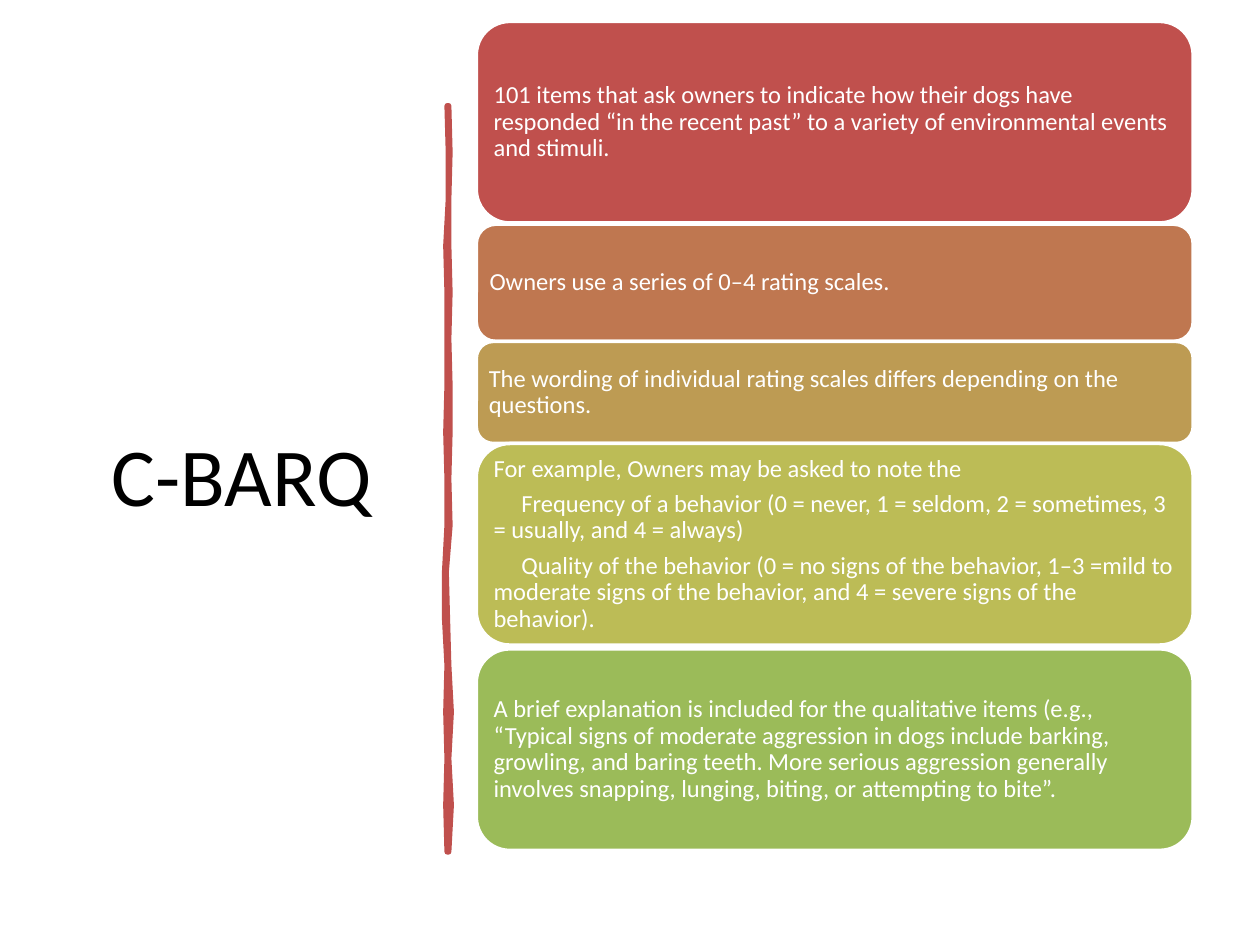
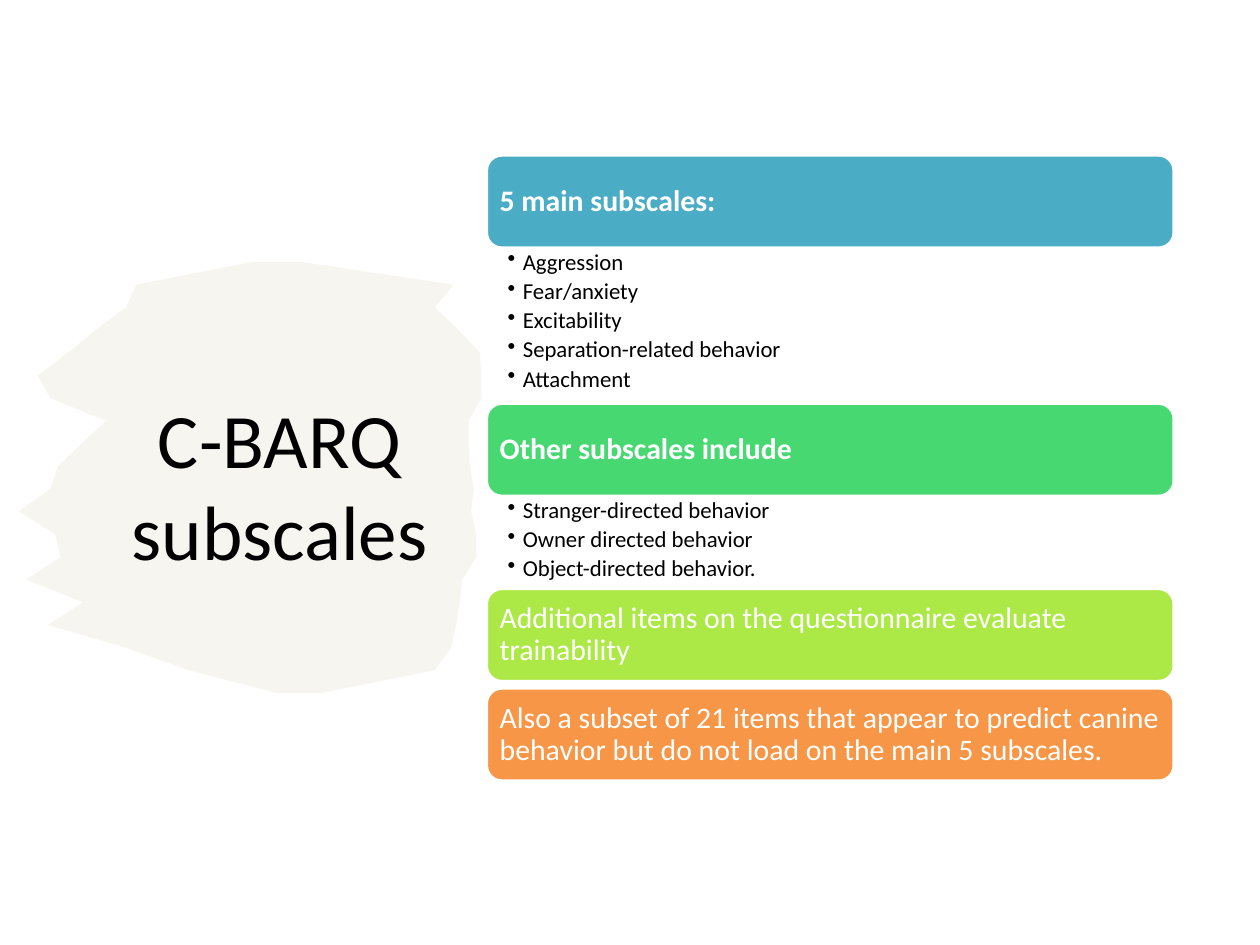
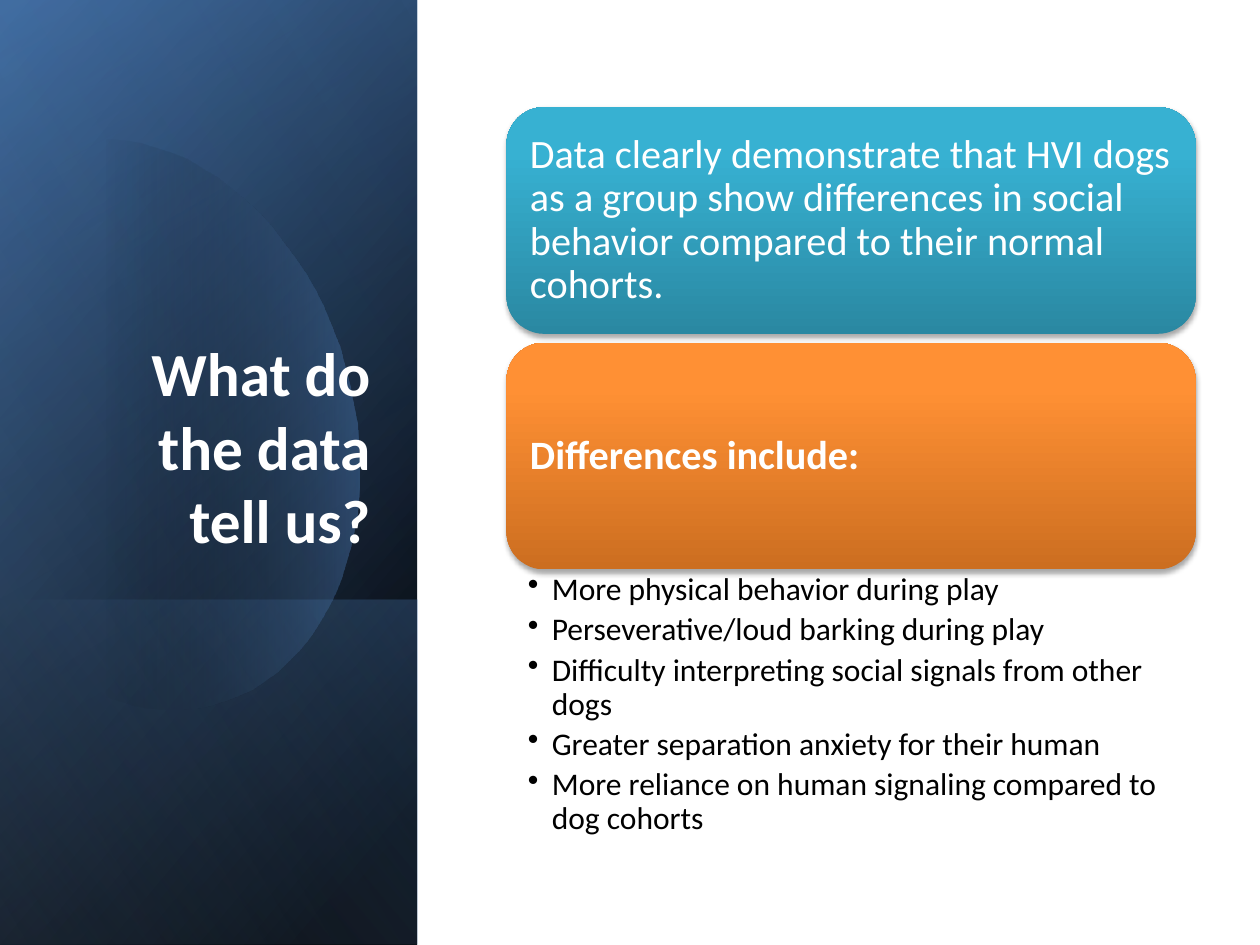
"""Build three slides on the C-BARQ questionnaire and what its data tell us."""
from dataclasses import dataclass
from math import cos, radians, sin

from lxml import etree
from pptx import Presentation
from pptx.dml.color import RGBColor
from pptx.enum.shapes import MSO_SHAPE
from pptx.enum.text import MSO_ANCHOR, PP_ALIGN
from pptx.oxml.ns import qn
from pptx.util import Pt

PX = 9144
ROUNDED, RECTANGLE = MSO_SHAPE.ROUNDED_RECTANGLE, MSO_SHAPE.RECTANGLE
TOP, MIDDLE, BOTTOM = MSO_ANCHOR.TOP, MSO_ANCHOR.MIDDLE, MSO_ANCHOR.BOTTOM
LEFT, CENTER, RIGHT = PP_ALIGN.LEFT, PP_ALIGN.CENTER, PP_ALIGN.RIGHT


@dataclass(frozen=True)
class Theme:
    font: str = "Calibri"
    ink: RGBColor = RGBColor(0x00, 0x00, 0x00)
    paper: RGBColor = RGBColor(0xFF, 0xFF, 0xFF)
    red: RGBColor = RGBColor(0xC0, 0x50, 0x4D)
    copper: RGBColor = RGBColor(0xBF, 0x77, 0x50)
    ochre: RGBColor = RGBColor(0xBD, 0x9B, 0x53)
    olive: RGBColor = RGBColor(0xBC, 0xBC, 0x56)
    green: RGBColor = RGBColor(0x9B, 0xBB, 0x59)
    aqua: RGBColor = RGBColor(0x4B, 0xAC, 0xC6)
    mint: RGBColor = RGBColor(0x47, 0xD8, 0x72)
    lime: RGBColor = RGBColor(0xAC, 0xE9, 0x46)
    orange: RGBColor = RGBColor(0xF7, 0x96, 0x46)
    cream: RGBColor = RGBColor(0xEE, 0xEC, 0xE1)
    blue: RGBColor = RGBColor(0x4F, 0x81, 0xBD)
    navy: RGBColor = RGBColor(0x37, 0x60, 0x92)
    pale_blue: RGBColor = RGBColor(0x95, 0xB3, 0xD7)
    deep_teal: RGBColor = RGBColor(0x2A, 0x88, 0xA2)
    bright_teal: RGBColor = RGBColor(0x37, 0xB1, 0xD2)
    deep_orange: RGBColor = RGBColor(0xCC, 0x6E, 0x20)
    bright_orange: RGBColor = RGBColor(0xFF, 0x90, 0x34)
    items_title: int = 47
    scales_title: int = 44
    data_title: int = 35
    items_card: int = 14
    scales_card: int = 17
    scales_bullet: int = 13
    data_card: int = 23
    data_bullet: int = 18
    card_spacing: float = 0.9
    card_after: float = 0.35
    bullet_after: float = 0.2


theme = Theme()


def write(shape, lines, size, color, insets=(10, 5, 10, 5), anchor=MIDDLE,
          align=LEFT, bold=False, spacing=1.0, after=0, hang=0):
    frame = shape.text_frame
    frame.word_wrap = True
    frame.vertical_anchor = anchor
    (frame.margin_left, frame.margin_top,
     frame.margin_right, frame.margin_bottom) = [inset * PX for inset in insets]
    frame.text = "\n".join(lines)
    for para in frame.paragraphs:
        para.alignment = align
        para.line_spacing = spacing
        para.space_after = Pt(size * after)
        para.font.name = theme.font
        if hang:
            properties = para._p.get_or_add_pPr()
            properties.set("marL", str(hang * PX))
            properties.set("indent", str(-hang * PX))
            bullet = etree.Element(qn("a:buChar"), char="•")
            properties.find(qn("a:spcAft")).addnext(bullet)
        for span in para.runs:
            span.font.name = theme.font
            span.font.size = Pt(size)
            span.font.bold = bold
            span.font.color.rgb = color


def add_card(page, box, fill, lines, size, inset, bold=False):
    card = page.shapes.add_shape(ROUNDED, *[length * PX for length in box])
    card.shadow.inherit = False
    card.fill.solid()
    card.fill.fore_color.rgb = fill
    card.line.color.rgb = theme.paper
    card.line.width = Pt(2)
    write(card, lines, size, theme.paper, [inset] * 4, bold=bold,
          spacing=theme.card_spacing, after=theme.card_after)
    return card


deck = Presentation()
deck.slide_width, deck.slide_height = 1000 * PX, 750 * PX
blank = deck.slide_layouts[6]
items_page, scales_page, data_page = [deck.slides.add_slide(blank) for _ in range(3)]

gradients = []
opacities = []

# Each painted mark is a pair of edges read at equal steps down the page.
brush_right = [356 + drift for drift in (0, 1, 0, 0, 1, 0, 1, 1, 0, 1, -2, -1, 0, 2, 0, 2, 0)]
brush_left = [355 + drift for drift in (0, 1, 1, -1, 0, 0, 0, -1, 0, 0, -2, -2, 0, -1, 0, -1, 0)]
blot_right = (240, 360, 345, 364, 381, 382, 382, 372, 372, 373,
              376, 374, 378, 378, 367, 365, 362, 358, 345, 255)
blot_left = (200, 108, 100, 76, 54, 30, 40, 84, 65, 46,
             40, 15, 44, 48, 21, 66, 38, 100, 150, 220)
marks = []
for page, color, top, step, left_edge, right_edge in (
        (items_page, theme.red, 84, 37, brush_left, brush_right),
        (scales_page, theme.cream, 208, 18, blot_left, blot_right)):
    heights = range(top, top + step * len(left_edge), step)
    outline = list(zip(right_edge, heights)) + list(zip(left_edge, heights))[::-1]
    builder = page.shapes.build_freeform(*outline[0], scale=PX)
    builder.add_line_segments(outline[1:], close=True)
    mark = builder.convert_to_shape()
    mark.shadow.inherit = False
    mark.fill.solid()
    mark.fill.fore_color.rgb = color
    mark.line.fill.background()
    marks.append(mark)
brush, blot = marks
brush.line.color.rgb = theme.red
brush.line.width = Pt(3.25)
opacities.append((blot, (50,)))

band = (0, 0, 331, 750)
band_foot = (0, 476, 331, 274)
oval_x, oval_y, oval_width, oval_height, oval_lean = 109, 337, 176, 226, 9
oval_outline = [
    (max(0, oval_x + oval_width * cos(radians(turn - oval_lean))),
     oval_y + oval_height * sin(radians(turn)))
    for turn in range(0, 360, 4)]
oval_builder = data_page.shapes.build_freeform(*oval_outline[0], scale=PX)
oval_builder.add_line_segments(oval_outline[1:], close=True)

layers = [
    (band, 220, (8, theme.ink, 100), (100, theme.navy, 100)),
    (band, 240, (0, theme.ink, 0), (99, theme.blue, 46)),
    (band_foot, 140, (2, theme.blue, 29), (100, theme.ink, 30)),
    ("oval", 0, (29, theme.ink, 0), (100, theme.blue, 43)),
    (band, 150, (0, theme.ink, 0), (99, theme.pale_blue, 11))]
for box, angle, start, end in layers:
    if box == "oval":
        layer = oval_builder.convert_to_shape()
    else:
        layer = data_page.shapes.add_shape(RECTANGLE, *[length * PX for length in box])
    layer.shadow.inherit = False
    layer.line.fill.background()
    gradients.append((layer, angle, (start[:2], end[:2])))
    opacities.append((layer, (start[2], end[2])))

titles = [
    (items_page, (52, 70, 280, 611), "C-BARQ",
     theme.items_title, theme.ink, MIDDLE, CENTER, False),
    (scales_page, (69, 164, 306, 440), "C-BARQ subscales",
     theme.scales_title, theme.ink, MIDDLE, CENTER, False),
    (data_page, (48, 184, 256, 262), "What do the data tell us?",
     theme.data_title, theme.paper, BOTTOM, RIGHT, True)]
for page, box, text, size, color, anchor, align, bold in titles:
    title = page.shapes.add_textbox(*[length * PX for length in box])
    write(title, [text], size, color, anchor=anchor, align=align, bold=bold)

items_left, items_width, first_line = 378, 569, 22
items = [
    (17, 160, theme.red, [
        "101 items that ask owners to indicate how their dogs have responded “in the recent "
        "past” to a variety of environmental events and stimuli."]),
    (178, 93, theme.copper, ["Owners use a series of 0–4 rating scales."]),
    (271, 81, theme.ochre, [
        "The wording of individual rating scales differs depending on the questions."]),
    (352, 160, theme.olive, [
        "For example, Owners may be asked to note the",
        "Frequency of a behavior (0 = never, 1 = seldom, 2 = sometimes, 3 = usually, "
        "and 4 = always)",
        "Quality of the behavior (0 = no signs of the behavior, 1–3 =mild to moderate signs "
        "of the behavior, and 4 = severe signs of the behavior)."]),
    (515, 160, theme.green, [
        "A brief explanation is included for the qualitative items (e.g., “Typical signs of "
        "moderate aggression in dogs include barking, growling, and baring teeth. More serious "
        "aggression generally involves snapping, lunging, biting, or attempting to bite”."])]
for top, height, fill, lines in items:
    card = add_card(items_page, (items_left, top, items_width, height), fill, lines,
                    theme.items_card, 6)
    for para in card.text_frame.paragraphs[1:]:
        para._p.get_or_add_pPr().set("indent", str(first_line * PX))

scales_left, scales_width, scales_height, scales_gap = 386, 546, 74, 5
subscales = [
    (theme.aqua, "5 main subscales:", 123, [
        "Aggression", "Fear/anxiety", "Excitability", "Separation-related behavior",
        "Attachment"]),
    (theme.mint, "Other subscales include", 73, [
        "Stranger-directed behavior", "Owner directed behavior", "Object-directed behavior."]),
    (theme.lime, "Additional items on the questionnaire evaluate trainability",
     scales_gap, []),
    (theme.orange, "Also a subset of 21 items that appear to predict canine behavior but do not "
     "load on the main 5 subscales.", scales_gap, [])]
top = 123
for fill, heading, room, bullets in subscales:
    add_card(scales_page, (scales_left, top, scales_width, scales_height), fill, [heading],
             theme.scales_card, 7, bold=bool(bullets))
    top += scales_height
    if bullets:
        box = scales_page.shapes.add_textbox(
            scales_left * PX, top * PX, scales_width * PX, room * PX)
        write(box, bullets, theme.scales_bullet, theme.ink, (17, 2, 13, 2), TOP,
              spacing=theme.card_spacing, after=theme.bullet_after, hang=12)
    top += room

data_left, data_width, data_height, data_gap = 402, 547, 180, 7
findings = [
    ("Data clearly demonstrate that HVI dogs as a group show differences in social behavior "
     "compared to their normal cohorts.", False, theme.deep_teal, theme.bright_teal),
    ("Differences include:", True, theme.deep_orange, theme.bright_orange)]
for row, (text, bold, deep, bright) in enumerate(findings):
    top = 85 + row * (data_height + data_gap)
    card = add_card(data_page, (data_left, top, data_width, data_height), deep, [text],
                    theme.data_card, 10, bold)
    card.line.fill.background()
    effects = card._element.spPr.find(qn("a:effectLst"))
    shadow = etree.SubElement(effects, qn("a:outerShdw"), blurRad=str(Pt(3.1)),
                              dist=str(Pt(1.8)), dir="5400000", rotWithShape="0")
    etree.SubElement(shadow, qn("a:srgbClr"), val=str(theme.ink))
    gradients.append((card, 270, ((0, deep), (80, bright))))
    opacities.append((card, (100, 100, 35)))
differences = data_page.shapes.add_textbox(
    data_left * PX, (top + data_height) * PX, data_width * PX, 223 * PX)
write(differences, [
    "More physical behavior during play",
    "Perseverative/loud barking during play",
    "Difficulty interpreting social signals from other dogs",
    "Greater separation anxiety for their human",
    "More reliance on human signaling compared to dog cohorts",
], theme.data_bullet, theme.ink, (17, 3, 18, 3), TOP,
    spacing=theme.card_spacing, after=theme.bullet_after, hang=19)

for shape, angle, stops in gradients:
    shape.fill.gradient()
    shape.fill.gradient_angle = -angle % 360
    for stop, (place, color) in zip(shape.fill.gradient_stops, stops):
        stop.position = place / 100
        stop.color.rgb = color

for shape, percents in opacities:
    colors = list(shape._element.spPr.iter(qn("a:srgbClr")))
    for color, percent in zip(colors, percents):
        etree.SubElement(color, qn("a:alpha"), val=str(percent * 1000))

deck.save("out.pptx")
